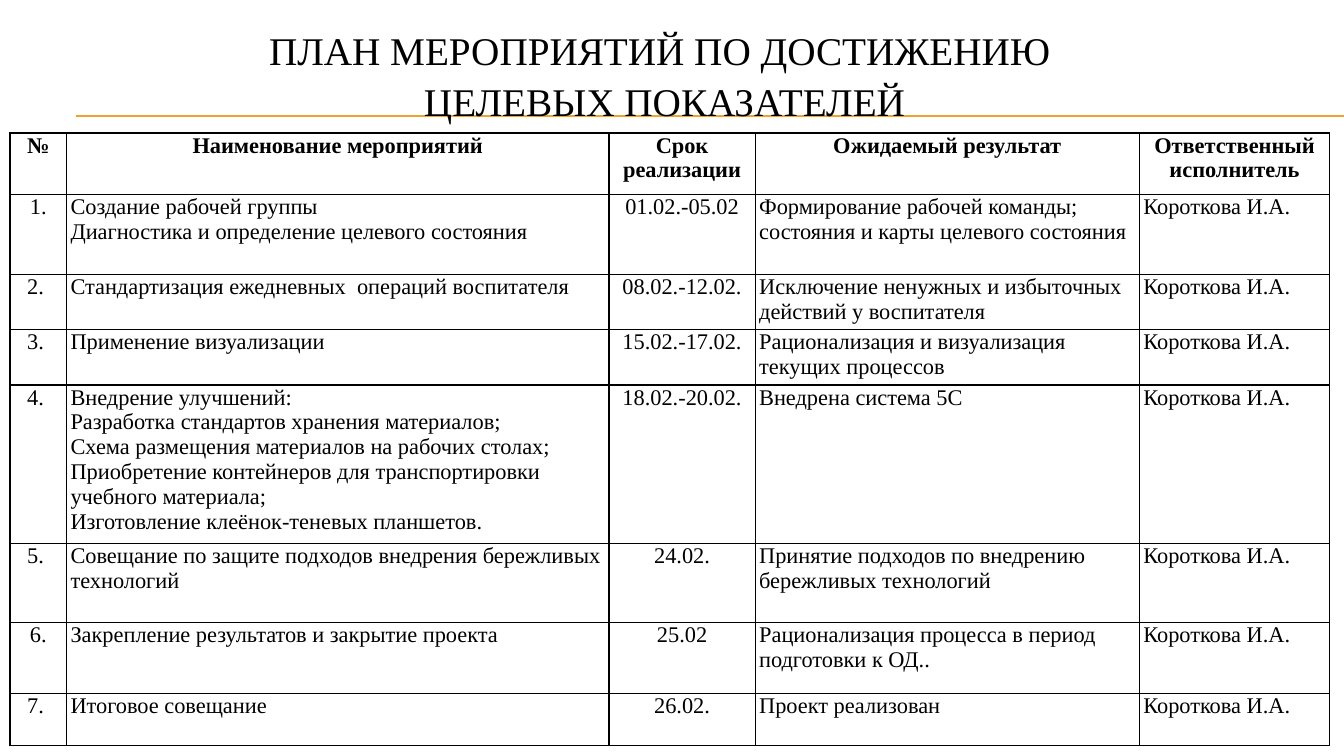
from dataclasses import dataclass

from lxml.etree import SubElement
from pptx import Presentation
from pptx.dml.color import RGBColor
from pptx.enum.shapes import MSO_CONNECTOR
from pptx.enum.text import MSO_ANCHOR, PP_ALIGN
from pptx.oxml.ns import qn
from pptx.util import Inches, Pt


@dataclass(frozen=True)
class Theme:
    font: str = "Times New Roman"
    ink: str = "000000"
    accent: str = "F0A22E"
    title_size: int = 28
    body_size: int = 16
    border: float = 1
    rule: float = 0.75


THEME = Theme()
SLIDE_WIDTH, SLIDE_HEIGHT = 13.33, 7.5

TITLE = "ПЛАН МЕРОПРИЯТИЙ ПО ДОСТИЖЕНИЮ \vЦЕЛЕВЫХ ПОКАЗАТЕЛЕЙ"
HEADERS = ["№", "Наименование мероприятий", "Срок реализации",
           "Ожидаемый результат", "Ответственный исполнитель"]
EXECUTOR = "Короткова И.А."
ACTIVITIES = [
    ("1.", "Создание рабочей группы\nДиагностика и определение целевого состояния",
     "01.02.-05.02",
     "Формирование рабочей команды;  состояния и карты целевого состояния"),
    ("2. ", "Стандартизация ежедневных  операций воспитателя", "08.02.-12.02.",
     "Исключение ненужных и избыточных действий у воспитателя"),
    ("3. ", "Применение визуализации", "15.02.-17.02.",
     "Рационализация и визуализация текущих процессов"),
    ("4. ", "Внедрение улучшений:\n"
     "Разработка стандартов хранения материалов;\n"
     "Схема размещения материалов на рабочих столах;\n"
     "Приобретение контейнеров для транспортировки  учебного материала;\n"
     "Изготовление клеёнок-теневых планшетов.",
     "18.02.-20.02.", "Внедрена система 5С"),
    ("5. ", "Совещание по защите подходов внедрения бережливых технологий", "24.02.",
     "Принятие подходов по внедрению\nбережливых технологий"),
    ("6.", "Закрепление результатов и закрытие проекта", "25.02",
     "Рационализация процесса в период подготовки к ОД.."),
    ("7. ", "Итоговое совещание", "26.02.", "Проект реализован"),
]
COLUMN_WIDTHS = [0.56, 5.38, 1.45, 3.81, 1.89]
ROW_HEIGHTS = [0.61, 0.79, 0.55, 0.55, 1.57, 0.79, 0.7, 0.52]
CENTRED_COLUMNS = {0, 2}


def style_paragraph(paragraph, size, centred, bold=False):
    paragraph.alignment = PP_ALIGN.CENTER if centred else PP_ALIGN.LEFT
    font = paragraph.font
    font.name, font.size, font.bold = THEME.font, Pt(size), bold
    font.color.rgb = RGBColor.from_string(THEME.ink)


def add_title(slide, left, top, width, height):
    title = slide.shapes.title
    title.left, title.top = Inches(left), Inches(top)
    title.width, title.height = Inches(width), Inches(height)
    frame = title.text_frame
    frame.word_wrap = True
    frame.vertical_anchor = MSO_ANCHOR.MIDDLE
    frame.text = TITLE
    heading = frame.paragraphs[0]
    heading.line_spacing = 1.08
    style_paragraph(heading, THEME.title_size, centred=True)


def add_double_rule(slide, left, top, width, gap):
    """Draw two close lines behind the title."""
    for y in (top, top + gap):
        rule = slide.shapes.add_connector(
            MSO_CONNECTOR.STRAIGHT, Inches(left), Inches(y),
            Inches(left + width), Inches(y))
        rule.line.color.rgb = RGBColor.from_string(THEME.accent)
        rule.line.width = Pt(THEME.rule)
        SubElement(rule.element.spPr, qn("a:effectLst"))
        slide.shapes.title.element.addprevious(rule.element)


def add_borders(cell):
    """Put the four edges ahead of the fill, as the schema demands."""
    properties = cell._tc.get_or_add_tcPr()
    for position, edge in enumerate(("lnL", "lnR", "lnT", "lnB")):
        line = SubElement(properties, qn(f"a:{edge}"), w=str(Pt(THEME.border)))
        fill = SubElement(line, qn("a:solidFill"))
        SubElement(fill, qn("a:srgbClr"), val=THEME.ink)
        properties.insert(position, line)


def fill_cell(cell, text, centred, bold):
    cell.margin_left = cell.margin_right = Inches(0.04)
    cell.margin_top = cell.margin_bottom = 0
    cell.vertical_anchor = MSO_ANCHOR.TOP
    cell.text = text
    for paragraph in cell.text_frame.paragraphs:
        style_paragraph(paragraph, THEME.body_size, centred, bold)
    cell.fill.background()
    add_borders(cell)


def add_plan_table(slide, left, top):
    rows = [HEADERS] + [[*activity, EXECUTOR] for activity in ACTIVITIES]
    plan = slide.shapes.add_table(
        len(rows), len(HEADERS), Inches(left), Inches(top),
        Inches(sum(COLUMN_WIDTHS)), Inches(sum(ROW_HEIGHTS))).table
    plan.horz_banding = False
    for column, width in zip(plan.columns, COLUMN_WIDTHS):
        column.width = Inches(width)
    for row, height in zip(plan.rows, ROW_HEIGHTS):
        row.height = Inches(height)
    for r, texts in enumerate(rows):
        is_header = r == 0
        for c, text in enumerate(texts):
            fill_cell(plan.cell(r, c), text,
                      centred=is_header or c in CENTRED_COLUMNS, bold=is_header)


def main():
    deck = Presentation()
    deck.slide_width, deck.slide_height = Inches(SLIDE_WIDTH), Inches(SLIDE_HEIGHT)
    slide = deck.slides.add_slide(deck.slide_layouts.get_by_name("Title Only"))
    add_title(slide, 0.84, 0.13, 11.5, 1.2)
    add_double_rule(slide, 0.75, 1.15, SLIDE_WIDTH - 0.75, gap=0.01)
    add_plan_table(slide, 0.1, 1.32)
    deck.save("out.pptx")


if __name__ == "__main__":
    main()
